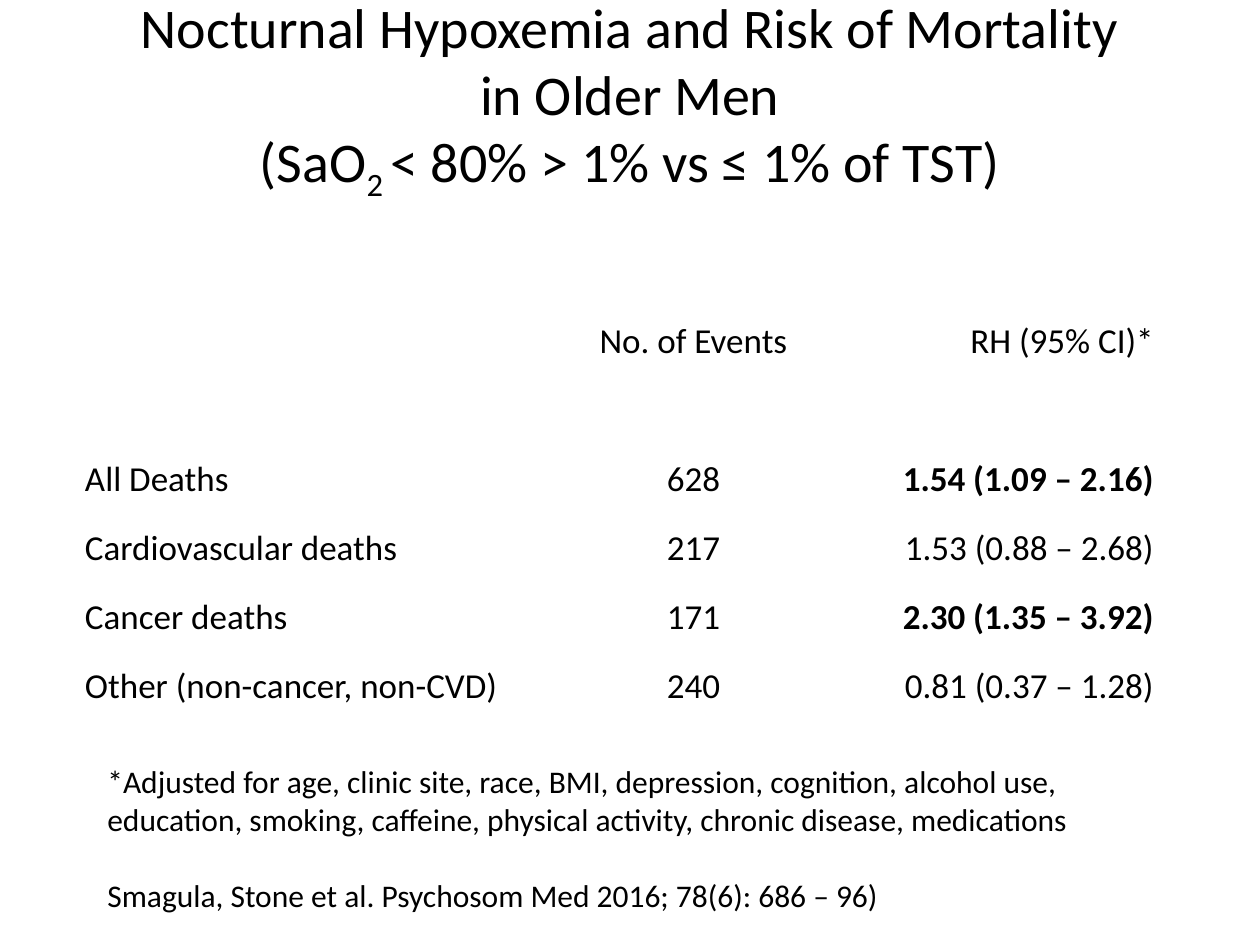
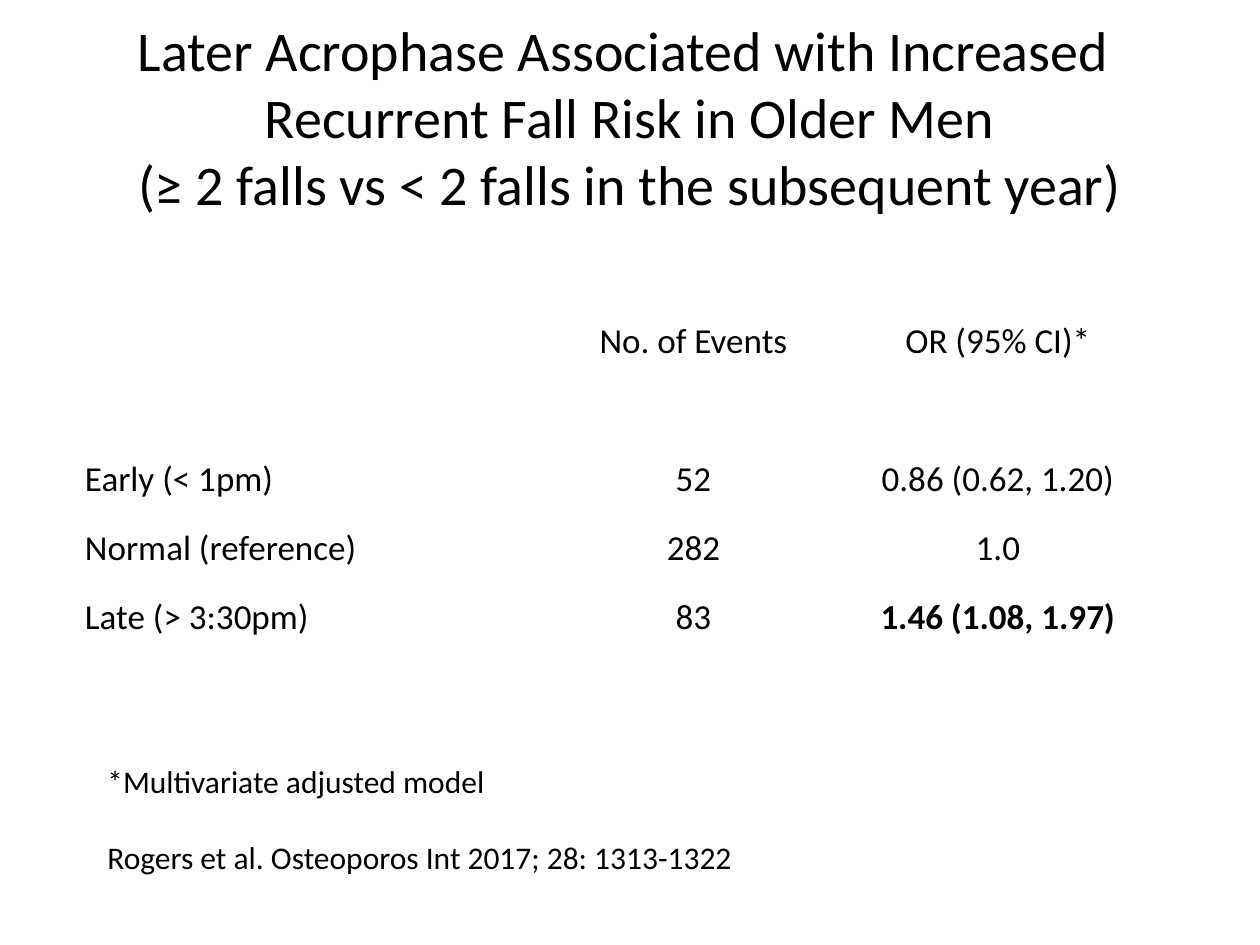
"""Build two slides that tabulate sleep-related risk estimates in older men."""
from dataclasses import dataclass

import pptx
import pptx.dml.color
import pptx.enum.text
import pptx.presentation
import pptx.slide
import pptx.text.text
import pptx.util

PX_PER_INCH = 126
FONT = "Calibri"
BLACK = pptx.dml.color.RGBColor(0, 0, 0)
WHITE = pptx.dml.color.RGBColor(255, 255, 255)
TITLE_SIZE, TABLE_SIZE, FOOTER_SIZE = 32, 20, 18
COLUMN_WIDTHS = (462, 295, 314)
ROW_COUNT, ROW_HEIGHT = 7, 69
SUBSCRIPT = "-25000"
ALIGN = pptx.enum.text.PP_ALIGN
ANCHOR = pptx.enum.text.MSO_ANCHOR


@dataclass(frozen=True)
class Outcome:
    """One row of risk estimates."""
    group: str
    events: str
    estimate: str
    significant: bool = False


@dataclass(frozen=True)
class RiskSlide:
    """Content of one slide: title, table of outcomes, footnote and citation."""
    title_parts: tuple[str, ...]
    title_top: int
    measure: str
    measure_align: ALIGN
    outcomes: tuple[Outcome, ...]
    footnote: str
    citation: str
    footer_height: int


RISK_SLIDES = (
    RiskSlide(
        ("Nocturnal Hypoxemia and Risk of Mortality\nin Older Men\n(SaO",
         "2 ", "< 80% > 1% vs ≤ 1% of TST)"),
        35, "RH (95% CI)*", ALIGN.RIGHT,
        (Outcome("All Deaths", "628", "1.54 (1.09 – 2.16)", True),
         Outcome("Cardiovascular deaths", "217", "1.53 (0.88 – 2.68)"),
         Outcome("Cancer deaths", "171", "2.30 (1.35 – 3.92)", True),
         Outcome("Other (non-cancer, non-CVD)", "240", "0.81 (0.37 – 1.28)")),
        "*Adjusted for age, clinic site, race, BMI, depression, cognition, "
        "alcohol use, education, smoking, caffeine, physical activity, "
        "chronic disease, medications",
        "Smagula, Stone et al. Psychosom Med 2016; 78(6): 686 – 96)", 165),
    RiskSlide(
        ("Later Acrophase Associated with Increased \n"
         "Recurrent Fall Risk in Older Men\n"
         "(≥ 2 falls vs < 2 falls in the subsequent year)",),
        53, "OR (95% CI)*", ALIGN.CENTER,
        (Outcome("Early (< 1pm)", "52", "0.86 (0.62, 1.20)"),
         Outcome("Normal (reference)", "282", "1.0"),
         Outcome("Late (> 3:30pm)", "83", "1.46 (1.08, 1.97)", True)),
        "*Multivariate adjusted model",
        "Rogers et al. Osteoporos Int 2017; 28: 1313-1322", 127),
)


def px(length: int) -> pptx.util.Emu:
    """Turn pixels into EMU."""
    return pptx.util.Emu(round(length * 914400 / PX_PER_INCH))


def style(paragraph: pptx.text.text._Paragraph, size: int,
          align: ALIGN = ALIGN.LEFT, bold: bool = False) -> None:
    """Align a paragraph and format its runs."""
    paragraph.alignment = align
    for run in paragraph.runs:
        run.font.name = FONT
        run.font.size = pptx.util.Pt(size)
        run.font.bold = bold
        run.font.color.rgb = BLACK


def add_title(slide: pptx.slide.Slide, content: RiskSlide) -> None:
    """Add the centred title, with every second part as a subscript."""
    frame = slide.shapes.add_textbox(
        px(84), px(content.title_top), px(1092), px(126)).text_frame
    frame.word_wrap = True
    frame.vertical_anchor = ANCHOR.MIDDLE
    title = frame.paragraphs[0]
    title.text = content.title_parts[0]
    for index, part in enumerate(content.title_parts[1:], start=1):
        run = title.add_run()
        run.text = part
        if index % 2:
            run._r.get_or_add_rPr().set("baseline", SUBSCRIPT)
    style(title, TITLE_SIZE, ALIGN.CENTER)


def add_risk_table(slide: pptx.slide.Slide, content: RiskSlide) -> None:
    """Add the plain table: headings, an empty row, then the outcomes."""
    table = slide.shapes.add_table(
        ROW_COUNT, len(COLUMN_WIDTHS), px(84), px(294),
        px(sum(COLUMN_WIDTHS)), px(ROW_COUNT * ROW_HEIGHT)).table
    table.first_row = table.horz_banding = False
    for column, width in zip(table.columns, COLUMN_WIDTHS):
        column.width = px(width)
    aligns = (ALIGN.LEFT, ALIGN.CENTER, content.measure_align)
    lines = (Outcome("", "No. of Events", content.measure),
             Outcome("", "", ""), *content.outcomes)
    for cell in table.iter_cells():
        cell.fill.background()
        cell.vertical_anchor = ANCHOR.BOTTOM
        cell.margin_left = cell.margin_right = cell.margin_top = px(1)
        cell.margin_bottom = 0
    for row, outcome in enumerate(lines):
        texts = (outcome.group, outcome.events, outcome.estimate)
        for column, (text, align) in enumerate(zip(texts, aligns)):
            if text:
                entry = table.cell(row, column).text_frame.paragraphs[0]
                entry.text = text
                bold = outcome.significant and text == outcome.estimate
                style(entry, TABLE_SIZE, align, bold)


def add_footer(slide: pptx.slide.Slide, content: RiskSlide) -> None:
    """Add the footnote and, a line lower, the citation."""
    frame = slide.shapes.add_textbox(
        px(95), px(756), px(1061), px(content.footer_height)).text_frame
    frame.word_wrap = True
    frame.auto_size = pptx.enum.text.MSO_AUTO_SIZE.SHAPE_TO_FIT_TEXT
    frame.text = f"{content.footnote}\n{content.citation}"
    for paragraph in frame.paragraphs:
        style(paragraph, FOOTER_SIZE)
    frame.paragraphs[1].space_before = pptx.util.Pt(22)


def add_risk_slide(deck: pptx.presentation.Presentation,
                   content: RiskSlide) -> None:
    """Add one slide on a white background."""
    slide = deck.slides.add_slide(deck.slide_layouts[6])
    slide.background.fill.solid()
    slide.background.fill.fore_color.rgb = WHITE
    add_title(slide, content)
    add_risk_table(slide, content)
    add_footer(slide, content)


def main() -> None:
    """Build and save the deck."""
    deck = pptx.Presentation()
    deck.slide_width, deck.slide_height = px(1260), px(945)
    for content in RISK_SLIDES:
        add_risk_slide(deck, content)
    deck.save("out.pptx")


if __name__ == "__main__":
    main()
